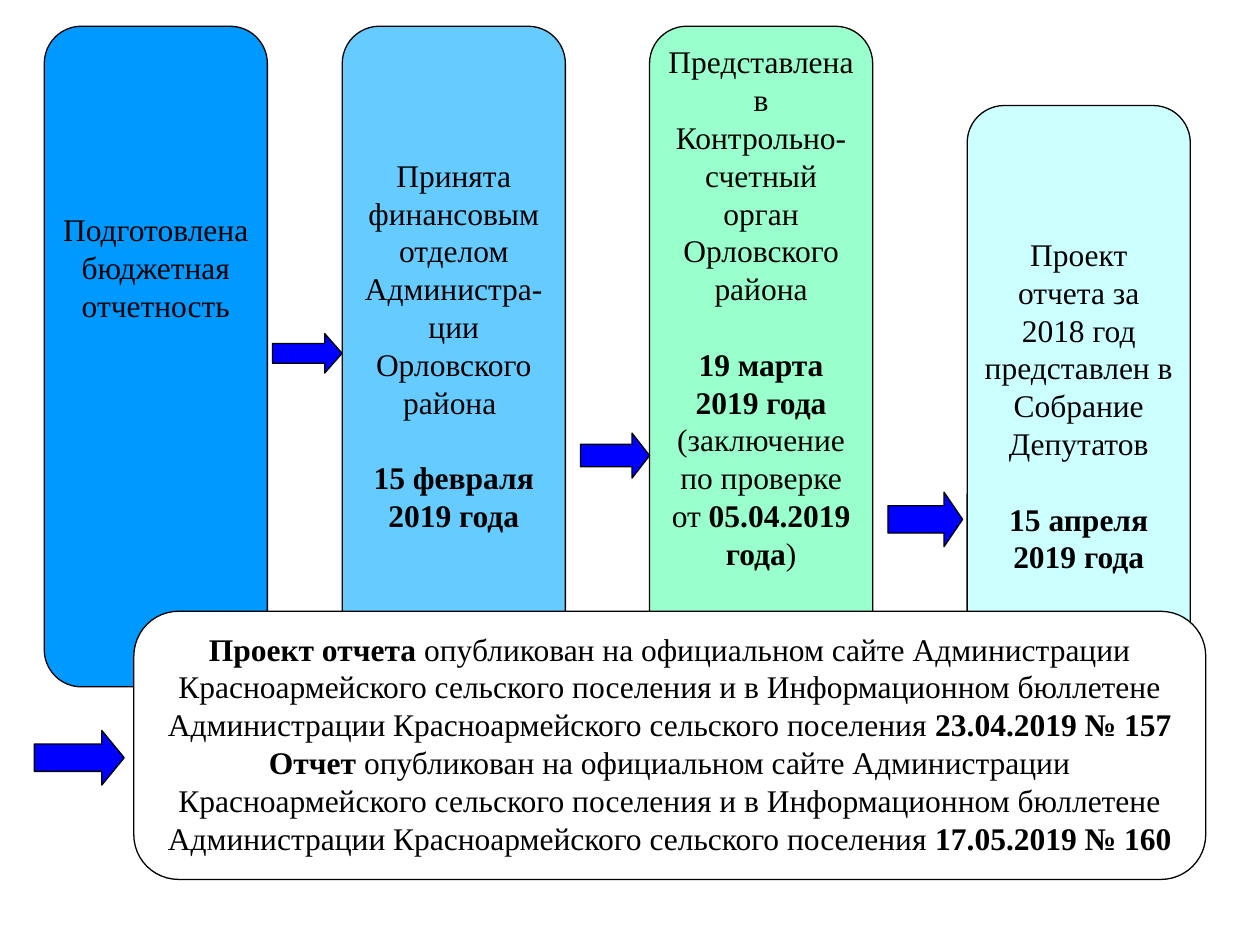
from dataclasses import dataclass

import pptx
import pptx.dml.color
import pptx.enum.shapes
import pptx.enum.text
import pptx.slide
import pptx.util

Pt = pptx.util.Pt
RGBColor = pptx.dml.color.RGBColor
Shape = pptx.enum.shapes.MSO_SHAPE

BLACK = RGBColor(0x00, 0x00, 0x00)
WHITE = RGBColor(0xFF, 0xFF, 0xFF)
ARROW_BLUE = RGBColor(0x00, 0x00, 0xFF)
DEEP_BLUE = RGBColor(0x00, 0x99, 0xFF)
SKY_BLUE = RGBColor(0x66, 0xCC, 0xFF)
MINT = RGBColor(0x99, 0xFF, 0xCC)
PALE_CYAN = RGBColor(0xCC, 0xFF, 0xFF)

FONT_NAME = "Times New Roman"
FONT_SIZE = 18
LINE_HEIGHT = 21.6
INSET = 3
COLUMN_WIDTH = 127.5
COLUMN_HEIGHT = 377.5


@dataclass(frozen=True)
class Span:
    text: str
    bold: bool = False


@dataclass(frozen=True)
class Para:
    spans: tuple[Span, ...]
    space_before: float = 0


@dataclass(frozen=True)
class Box:
    left: float
    top: float
    fill: RGBColor
    paras: tuple[Para, ...]
    text_offset: float = 0
    width: float = COLUMN_WIDTH
    height: float = COLUMN_HEIGHT


@dataclass(frozen=True)
class Arrow:
    left: float
    top: float
    width: float
    height: float
    head: float


def plain(text: str) -> Para:
    return Para((Span(text),))


def date(text: str, space_before: float = LINE_HEIGHT) -> Para:
    return Para((Span(text, True),), space_before)


def publication(subject: str, issue: str) -> Para:
    return Para((
        Span(subject, True),
        Span(
            " опубликован на официальном сайте Администрации "
            "Красноармейского сельского поселения и в Информационном бюллетене "
            "Администрации Красноармейского сельского поселения "
        ),
        Span(issue, True),
    ))


BOXES = (
    Box(25.3, 15, DEEP_BLUE, (
        plain("Подготовлена"),
        plain("бюджетная"),
        plain("отчетность"),
    ), text_offset=96),
    Box(195.6, 15, SKY_BLUE, (
        plain("Принята"),
        plain("финансовым отделом Администра-"),
        plain("ции Орловского района "),
        date("15 февраля"),
        date("2019 года", 0),
    ), text_offset=3 * LINE_HEIGHT),
    Box(371.2, 15, MINT, (
        plain("Представлена в Контрольно-счетный орган Орловского района"),
        date("19 марта 2019 года"),
        Para((
            Span("(заключение по проверке от "),
            Span("05.04.2019 года", True),
            Span(")"),
        )),
    )),
    Box(552.7, 60.3, PALE_CYAN, (
        plain("Проект отчета за 2018 год представлен в Собрание"),
        plain("Депутатов"),
        date("15 апреля 2019 года"),
    ), text_offset=3 * LINE_HEIGHT),
    Box(76.5, 349.3, WHITE, (
        publication("Проект отчета", "23.04.2019 № 157"),
        publication("Отчет", "17.05.2019 № 160"),
    ), width=612.5, height=153.2),
)

ARROWS = (
    Arrow(155.7, 190.6, 39.8, 22.6, 0.44),
    Arrow(331.7, 247.5, 39.5, 25.7, 0.39),
    Arrow(507.4, 281.2, 42.7, 31.2, 0.34),
    Arrow(19.6, 417.4, 51.4, 31.2, 0.41),
)


def add_outlined(
    page: pptx.slide.Slide, kind: Shape, item: Box | Arrow, fill: RGBColor
):
    shape = page.shapes.add_shape(
        kind, Pt(item.left), Pt(item.top), Pt(item.width), Pt(item.height)
    )
    shape.shadow.inherit = False
    shape.fill.solid()
    shape.fill.fore_color.rgb = fill
    shape.line.color.rgb = BLACK
    shape.line.width = Pt(0.75)
    return shape


def draw_box(page: pptx.slide.Slide, box: Box) -> None:
    frame = add_outlined(page, Shape.ROUNDED_RECTANGLE, box, box.fill).text_frame
    frame.word_wrap = True
    frame.vertical_anchor = pptx.enum.text.MSO_ANCHOR.TOP
    frame.margin_left = frame.margin_right = frame.margin_bottom = Pt(INSET)
    frame.margin_top = Pt(INSET + box.text_offset)
    for index, para in enumerate(box.paras):
        paragraph = frame.add_paragraph() if index else frame.paragraphs[0]
        paragraph.alignment = pptx.enum.text.PP_ALIGN.CENTER
        paragraph.line_spacing = Pt(LINE_HEIGHT)
        paragraph.space_before = Pt(para.space_before)
        for span in para.spans:
            run = paragraph.add_run()
            run.text = span.text
            run.font.name = FONT_NAME
            run.font.size = Pt(FONT_SIZE)
            run.font.bold = span.bold
            run.font.color.rgb = BLACK


def draw_arrow(page: pptx.slide.Slide, arrow: Arrow) -> None:
    shape = add_outlined(page, Shape.RIGHT_ARROW, arrow, ARROW_BLUE)
    shape.adjustments[1] = arrow.head


def main() -> None:
    deck = pptx.Presentation()
    deck.slide_width, deck.slide_height = Pt(720), Pt(540)
    page = deck.slides.add_slide(deck.slide_layouts[6])
    for box in BOXES:
        draw_box(page, box)
    for arrow in ARROWS:
        draw_arrow(page, arrow)
    deck.save("out.pptx")


if __name__ == "__main__":
    main()
